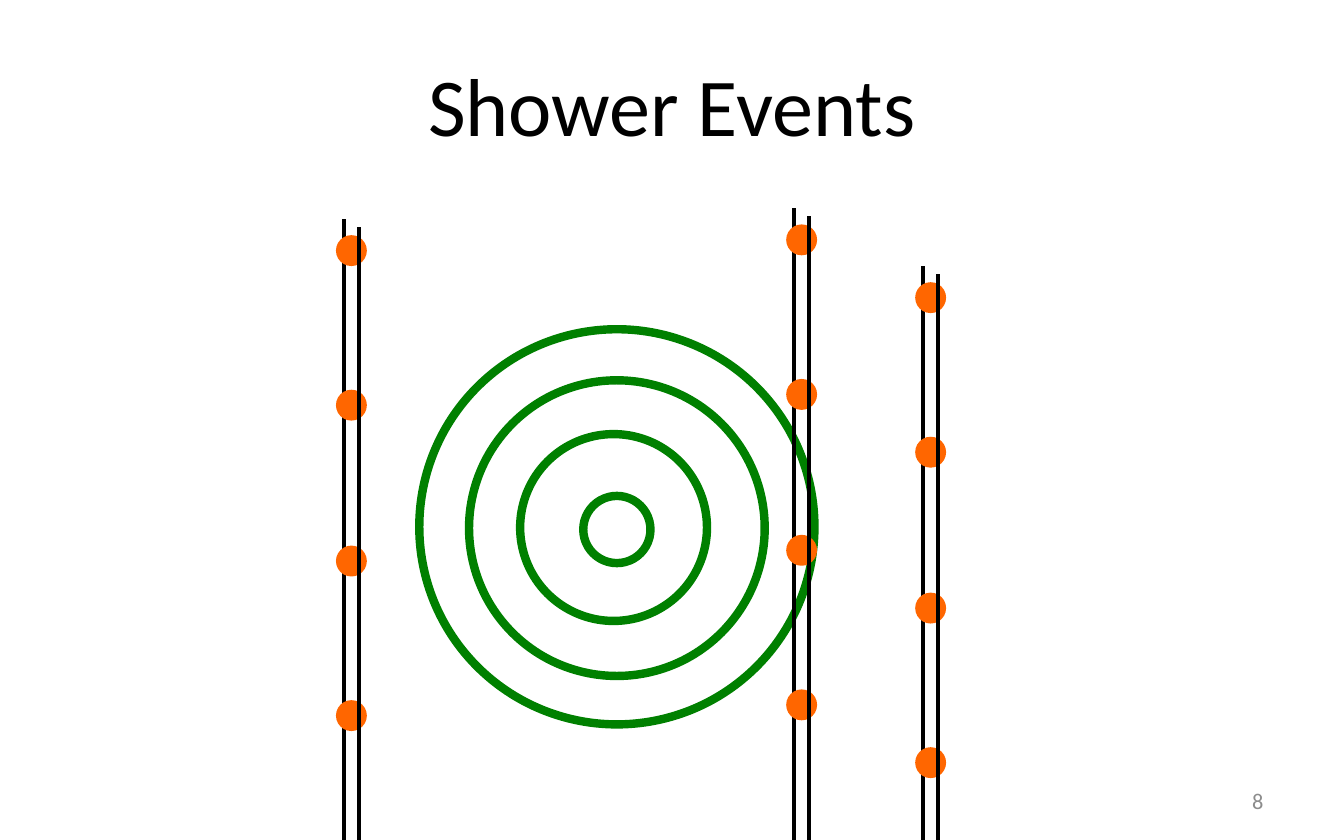
"""Build the "Shower Events" slide: detector strings around an expanding light front."""
from lxml import etree
from pptx import Presentation
from pptx.dml.color import RGBColor
from pptx.enum.shapes import MSO_CONNECTOR as CONN, MSO_SHAPE as SHAPE
from pptx.enum.text import MSO_ANCHOR as ANCHOR, PP_ALIGN as ALIGN
from pptx.oxml.ns import qn
from pptx.util import Pt

PX = 9144
BLACK = RGBColor(0x00, 0x00, 0x00)
GRAY = RGBColor(0x8C, 0x8C, 0x8C)
ORANGE = RGBColor(0xFF, 0x66, 0x00)
GREEN = RGBColor(0x00, 0x80, 0x00)

DOT, STRING_LENGTH = 23, 474


def add_text(s, box, text, size, color, align):
    tf = s.shapes.add_textbox(*[v * PX for v in box]).text_frame
    tf.word_wrap = True
    tf.vertical_anchor = ANCHOR.MIDDLE
    p = tf.paragraphs[0]
    p.alignment = align
    r = p.add_run()
    r.text = text
    r.font.name = "Calibri"
    r.font.size = Pt(size)
    r.font.color.rgb = color


def add_cable(group, x, y):
    cable = group.shapes.add_connector(
        CONN.STRAIGHT, x * PX, y * PX, x * PX, (y + STRING_LENGTH) * PX)
    cable.line.color.rgb = BLACK
    cable.line.width = Pt(2)
    etree.SubElement(cable._element.spPr, qn("a:effectLst"))


prs = Presentation()
prs.slide_width, prs.slide_height = 1000 * PX, 625 * PX
s = prs.slides.add_slide(prs.slide_layouts[6])

add_text(s, (50, 25, 900, 104), "Shower Events", 44, BLACK, ALIGN.CENTER)

rings = [(434, 369, 50), (387, 323, 139), (312, 245, 294), (349, 283, 220)]
strings = [(681, 198), (250, 163), (585, 155)]

for left, top in strings:
    if (left, top) == strings[-1]:
        front = s.shapes.add_group_shape()
        for x, y, size in rings:
            sp = front.shapes.add_shape(SHAPE.OVAL, x * PX, y * PX, size * PX, size * PX)
            sp.shadow.inherit = False
            sp.fill.background()
            sp.line.color.rgb = GREEN
            sp.line.width = Pt(4.5)

    group = s.shapes.add_group_shape()
    add_cable(group, left + 6, top)
    for i in range(4):
        y = top + 12 + 231 * i // 2
        sp = group.shapes.add_shape(SHAPE.OVAL, left * PX, y * PX, DOT * PX, DOT * PX)
        sp.shadow.inherit = False
        sp.fill.solid()
        sp.fill.fore_color.rgb = ORANGE
        sp.line.fill.background()
    add_cable(group, left + 17, top + 6)

add_text(s, (717, 579, 233, 33), "8", 12, GRAY, ALIGN.RIGHT)

prs.save("out.pptx")
